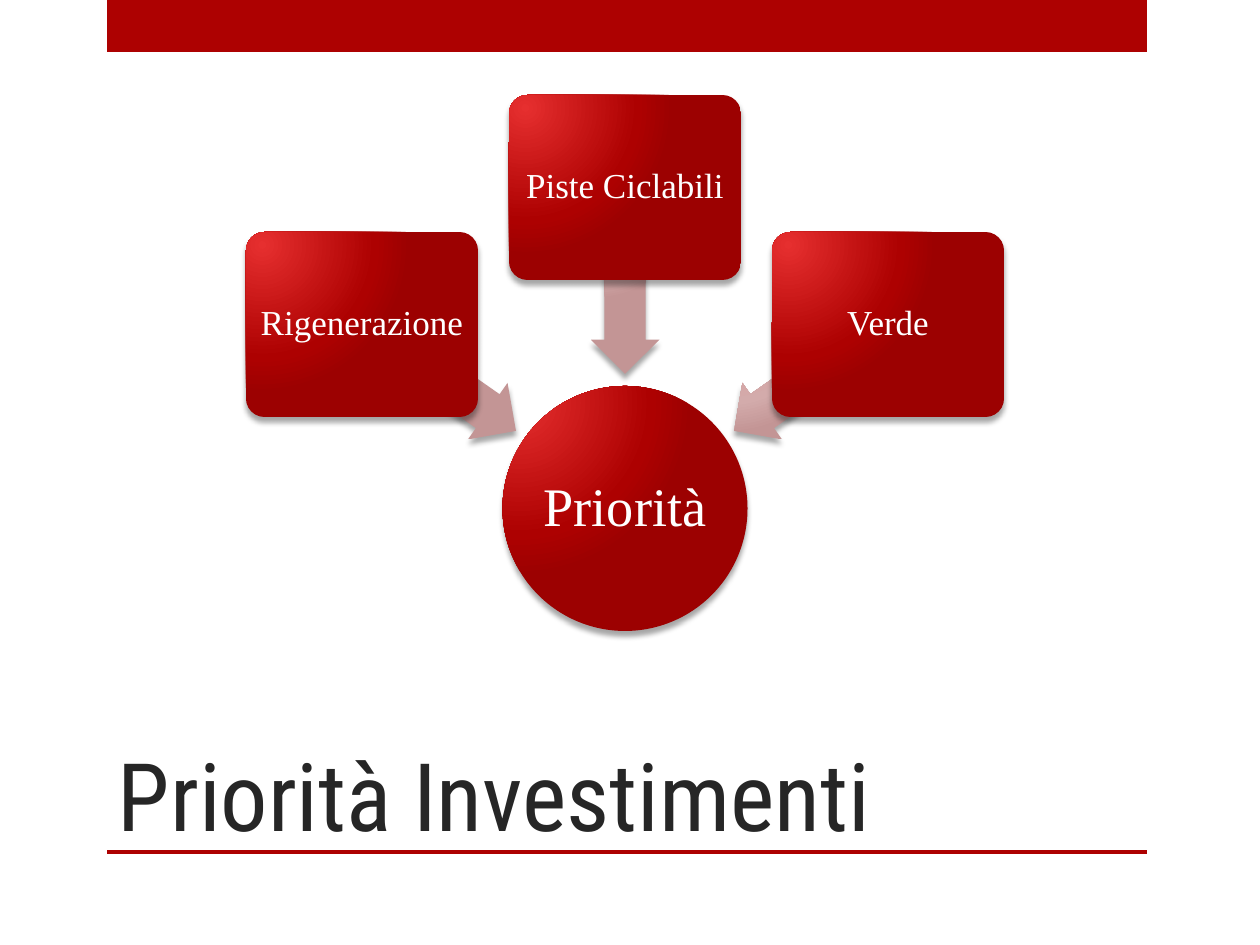
from pptx import Presentation
from pptx.dml.color import RGBColor
from pptx.enum.shapes import MSO_SHAPE
from pptx.enum.text import MSO_ANCHOR, PP_ALIGN
from pptx.oxml import parse_xml
from pptx.oxml.ns import nsdecls
from pptx.util import Emu, Pt

TITLE = "Priorità Investimenti"
GOAL = "Priorità"
# label, column from the centre, top, arrow centre y
INVESTMENTS = [
    ("Rigenerazione", -1, 232, 377),
    ("Piste Ciclabili", 0, 95, 280),
    ("Verde", 1, 232, 377),
]

RED, WHITE, DARK = "AD0101", "FFFFFF", "262626"
SOLID_STOPS = [(0, "E62F2F"), (76, RED), (100, "9C0101")]
PALE_STOPS = [(0, "E68989"), (76, "D3ABAB"), (100, "C39595")]
BODY_FONT, TITLE_FONT = "Times New Roman", "Roboto Condensed"

CENTER_X = 625
BOX_W, BOX_H, BOX_STEP = 232, 185, 263
ARROW_W, ARROW_H, ARROW_STEP, ARROW_TURN = 188, 69, 186, 55
CIRCLE_TOP, CIRCLE_D = 386, 245


def px(n):
    return Emu(round(n * 914400 / 126))


def color(value):
    return RGBColor.from_string(value)


def write(shape, text, size, font=BODY_FONT, fill=WHITE, align=PP_ALIGN.CENTER,
          anchor=MSO_ANCHOR.MIDDLE, insets=(5, 5, 5, 5), spacing=0.9):
    """Insets are left, top, right and bottom in px."""
    tf = shape.text_frame
    tf.word_wrap = True
    tf.vertical_anchor = anchor
    tf.margin_left, tf.margin_top, tf.margin_right, tf.margin_bottom = map(px, insets)
    p = tf.paragraphs[0]
    p.alignment = align
    p.line_spacing = spacing
    r = p.add_run()
    r.text = text
    r.font.name, r.font.size = font, Pt(size)
    r.font.color.rgb = color(fill)


def add_bar(slide, top, height):
    bar = slide.shapes.add_shape(MSO_SHAPE.RECTANGLE, px(107), px(top), px(1040), px(height))
    bar.shadow.inherit = False
    bar.fill.solid()
    bar.fill.fore_color.rgb = color(RED)
    bar.line.fill.background()


def add_glossy(slide, kind, box, stops, adjustments=()):
    """Add a shape with a radial gradient and a soft shadow below it."""
    sp = slide.shapes.add_shape(kind, *map(px, box))
    for i, value in enumerate(adjustments):
        sp.adjustments[i] = value
    gs = "".join(f'<a:gs pos="{pos * 1000}"><a:srgbClr val="{c}"/></a:gs>' for pos, c in stops)
    spPr = sp.element.spPr
    spPr.append(parse_xml(
        f'<a:gradFill {nsdecls("a")} rotWithShape="1"><a:gsLst>{gs}</a:gsLst>'
        '<a:path path="circle"><a:fillToRect l="15000" t="15000" r="100000" b="100000"/>'
        '</a:path></a:gradFill>'))
    sp.line.fill.background()
    spPr.append(parse_xml(
        f'<a:effectLst {nsdecls("a")}><a:outerShdw blurRad="{Pt(3)}" dist="{Pt(3)}" '
        'dir="5400000" rotWithShape="0"><a:srgbClr val="000000"><a:alpha val="35000"/>'
        '</a:srgbClr></a:outerShdw></a:effectLst>'))
    return sp


def main():
    prs = Presentation()
    prs.slide_width, prs.slide_height = px(1260), px(945)
    slide = prs.slides.add_slide(prs.slide_layouts[6])

    add_bar(slide, 0, 52)
    add_bar(slide, 850, 4)
    title = slide.shapes.add_textbox(px(105), px(703), px(935), px(147))
    write(title, TITLE, 54, font=TITLE_FONT, fill=DARK, align=PP_ALIGN.LEFT,
          anchor=MSO_ANCHOR.BOTTOM, insets=(13, 6, 13, 0), spacing=1.0)

    circle = add_glossy(slide, MSO_SHAPE.OVAL,
                        (CENTER_X - CIRCLE_D / 2, CIRCLE_TOP, CIRCLE_D, CIRCLE_D), SOLID_STOPS)
    write(circle, GOAL, 31, insets=(2, 2, 2, 2))

    for label, column, top, arrow_y in INVESTMENTS:
        arrow_x = CENTER_X + column * ARROW_STEP
        arrow = add_glossy(slide, MSO_SHAPE.LEFT_ARROW,
                           (arrow_x - ARROW_W / 2, arrow_y - ARROW_H / 2, ARROW_W, ARROW_H),
                           PALE_STOPS, (0.6, 0.5))
        arrow.rotation = 270 + column * ARROW_TURN
        box_x = CENTER_X + column * BOX_STEP
        box = add_glossy(slide, MSO_SHAPE.ROUNDED_RECTANGLE,
                         (box_x - BOX_W / 2, top, BOX_W, BOX_H), SOLID_STOPS, (0.1,))
        write(box, label, 20)

    prs.save("out.pptx")


if __name__ == "__main__":
    main()
